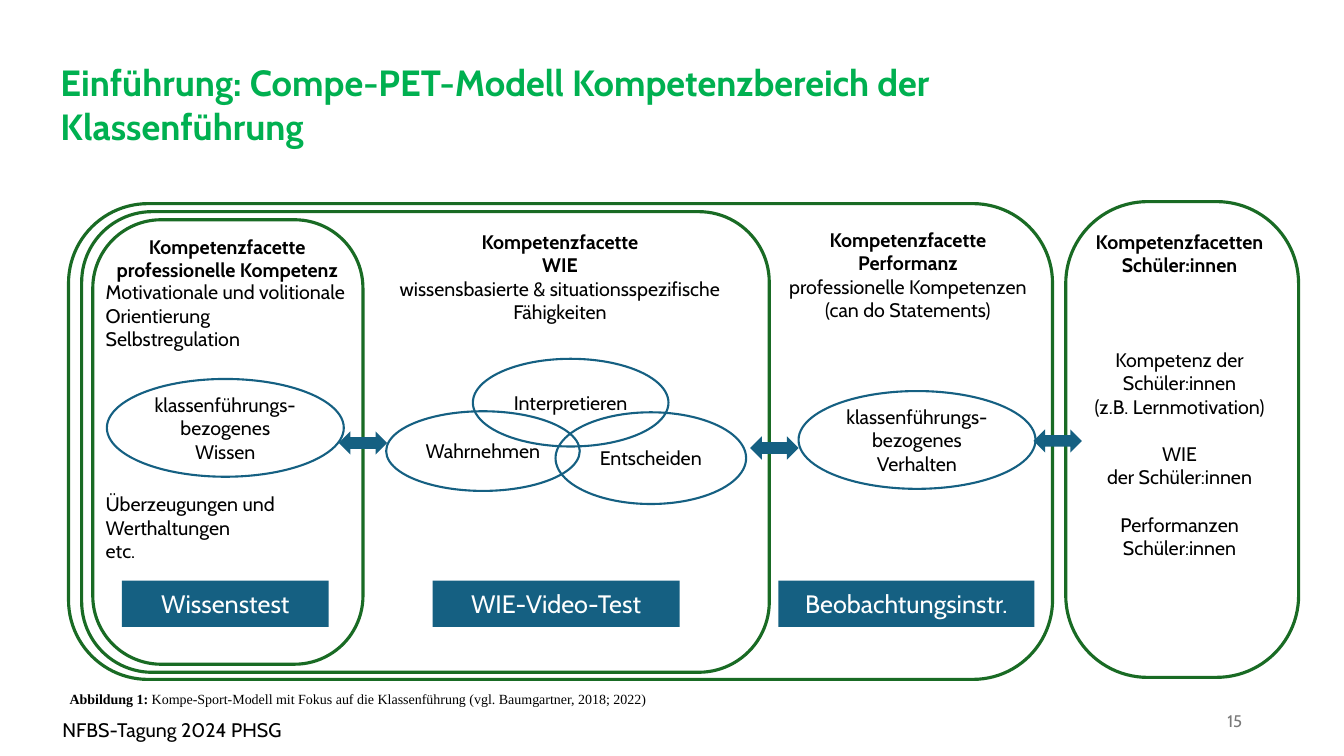
from dataclasses import dataclass

from pptx import Presentation
from pptx.dml.color import RGBColor
from pptx.enum.shapes import MSO_SHAPE as SHAPE
from pptx.enum.text import MSO_ANCHOR as ANCHOR, PP_ALIGN as ALIGN
from pptx.util import Inches, Pt

BLACK = RGBColor(0x00, 0x00, 0x00)
WHITE = RGBColor(0xFF, 0xFF, 0xFF)
GRAY = RGBColor(0x79, 0x79, 0x79)
TITLE_GREEN = RGBColor(0x00, 0xB0, 0x50)
PANEL_GREEN = RGBColor(0x19, 0x6B, 0x24)
BLUE = RGBColor(0x15, 0x60, 0x82)

LINE_PITCH = 16.85  # points, one text line at 14 pt


@dataclass(frozen=True)
class Box:
    left: float
    top: float
    width: float
    height: float


@dataclass(frozen=True)
class Line:
    """One paragraph: optional bold lead-in, and lines left free above it."""
    text: str
    bold: bool = False
    gap: int = 0
    lead: str = ""


@dataclass(frozen=True)
class TextBlock:
    box: Box
    lines: list[Line]


@dataclass(frozen=True)
class Oval:
    box: Box
    lines: list[Line]
    fill: RGBColor | None = None


@dataclass(frozen=True)
class Panel:
    box: Box
    radius: float


@dataclass(frozen=True)
class Instrument:
    left: float
    width: float
    label: str


FACTORS = TextBlock(Box(0.95, 2.73, 6.67, 2.93), [
    Line("Motivationale und volitionale"), Line("Orientierung"), Line("Selbstregulation"),
    Line("Überzeugungen und", gap=6), Line("Werthaltungen"), Line("etc."),
])

FACETS = [
    TextBlock(Box(7.65, 2.18, 2.71, 1.57), [
        Line("Kompetenzfacette", True), Line("Performanz", True),
        Line("professionelle Kompetenzen"), Line("(can do Statements)")]),
    TextBlock(Box(3.72, 2.2, 3.67, 1.1), [
        Line("Kompetenzfacette", True), Line("WIE", True),
        Line("wissensbasierte & situationsspezifische"), Line("Fähigkeiten")]),
    TextBlock(Box(0.92, 2.25, 2.67, 1.1), [
        Line("Kompetenzfacette", True), Line("professionelle Kompetenz", True)]),
    TextBlock(Box(10.68, 2.2, 2.04, 3.69), [
        Line("Kompetenzfacetten", True), Line("Schüler:innen", True),
        Line("Kompetenz der", gap=3), Line("Schüler:innen"), Line("(z.B. Lernmotivation)"),
        Line("WIE", gap=1), Line("der Schüler:innen"),
        Line("Performanzen", gap=1), Line("Schüler:innen")]),
]

OVALS = [
    Oval(Box(3.83, 4.08, 1.92, 0.79), [Line("Wahrnehmen")], WHITE),
    Oval(Box(4.69, 3.56, 1.94, 0.87), [Line("Interpretieren")]),
    Oval(Box(5.51, 4.09, 1.89, 0.91), [Line("Entscheiden")]),
    Oval(Box(1.06, 3.76, 2.35, 0.97), [Line("klassenführungs-bezogenes"), Line("Wissen")]),
    Oval(Box(7.92, 3.88, 2.35, 0.97), [Line("klassenführungs-bezogenes"), Line("Verhalten")]),
]

PANELS = [
    Panel(Box(0.68, 2.02, 9.76, 4.72), 0.167),
    Panel(Box(0.92, 2.18, 2.68, 4.41), 0.253),
    Panel(Box(0.81, 2.1, 6.82, 4.57), 0.153),
    Panel(Box(10.57, 2, 2.31, 4.72), 0.352),
]

INSTRUMENTS = [
    Instrument(1.21, 2.05, "Wissenstest"),
    Instrument(4.29, 2.45, "WIE-Video-Test"),
    Instrument(7.72, 2.54, "Beobachtungsinstr."),
]

ARROW_CORNERS = [(10.25, 4.26), (7.44, 4.33), (3.36, 4.28)]


def write(sp, lines: list[Line], *, size: float = 14, color: RGBColor = BLACK,
          font: str = "Cabin", align=ALIGN.CENTER, anchor=ANCHOR.MIDDLE,
          inset: tuple[float, float] = (0.1, 0.05), spacing: float | None = None) -> None:
    tf = sp.text_frame
    tf.word_wrap = True
    tf.vertical_anchor = anchor
    tf.margin_left = tf.margin_right = Inches(inset[0])
    tf.margin_top = tf.margin_bottom = Inches(inset[1])
    for i, line in enumerate(lines):
        p = tf.add_paragraph() if i else tf.paragraphs[0]
        p.alignment = align
        if spacing:
            p.line_spacing = spacing
        if line.gap:
            p.space_before = Pt(line.gap * LINE_PITCH)
        for text, bold in ((line.lead, True), (line.text, line.bold)):
            if not text:
                continue
            r = p.add_run()
            r.text = text
            r.font.name = font
            r.font.size = Pt(size)
            r.font.bold = bold
            r.font.color.rgb = color


def add_text(slide, box: Box, lines: list[Line], **text_format) -> None:
    sp = slide.shapes.add_textbox(*place(box))
    write(sp, lines, **text_format)


def place(box: Box) -> tuple:
    return Inches(box.left), Inches(box.top), Inches(box.width), Inches(box.height)


def add_shape(slide, kind, box: Box, *, fill: RGBColor | None = None,
              line: RGBColor | None = None, weight: float = 1.5):
    sp = slide.shapes.add_shape(kind, *place(box))
    sp.shadow.inherit = False
    if fill is None:
        sp.fill.background()
    else:
        sp.fill.solid()
        sp.fill.fore_color.rgb = fill
    if line is None:
        sp.line.fill.background()
    else:
        sp.line.color.rgb = line
        sp.line.width = Pt(weight)
    return sp


def draw_model(slide) -> None:
    add_text(slide, FACTORS.box, FACTORS.lines, align=ALIGN.LEFT, anchor=ANCHOR.TOP)
    for facet in FACETS:
        add_text(slide, facet.box, facet.lines, anchor=ANCHOR.TOP, inset=(0.12, 0.08))
    for oval in OVALS:
        sp = add_shape(slide, SHAPE.OVAL, oval.box, fill=oval.fill, line=BLUE)
        write(sp, oval.lines)
    for panel in PANELS:
        sp = add_shape(slide, SHAPE.ROUNDED_RECTANGLE, panel.box, line=PANEL_GREEN, weight=2.25)
        sp.adjustments[0] = panel.radius
    for item in INSTRUMENTS:
        sp = add_shape(slide, SHAPE.RECTANGLE, Box(item.left, 5.76, item.width, 0.46), fill=BLUE)
        write(sp, [Line(item.label)], size=18, color=WHITE)
    for left, top in ARROW_CORNERS:
        add_shape(slide, SHAPE.LEFT_RIGHT_ARROW, Box(left, top, 0.48, 0.23), fill=BLUE)


def draw_frame(slide) -> None:
    """Title, caption, footer and slide number."""
    add_text(slide, Box(0.6, 0.6, 10.79, 0.89),
             [Line("Einführung: Compe-PET-Modell Kompetenzbereich der Klassenführung", True)],
             size=26, color=TITLE_GREEN, align=ALIGN.LEFT, anchor=ANCHOR.TOP, inset=(0, 0))
    caption = add_shape(slide, SHAPE.RECTANGLE, Box(0.69, 6.82, 9.93, 0.18), fill=WHITE)
    write(caption, [Line("Kompe-Sport-Modell mit Fokus auf die Klassenführung "
                         "(vgl. Baumgartner, 2018; 2022)", lead="Abbildung 1: ")],
          size=10, font="Times New Roman", align=ALIGN.JUSTIFY, anchor=ANCHOR.TOP,
          inset=(0, 0), spacing=1.2)
    add_text(slide, Box(0.52, 7.07, 8.61, 0.34), [Line("NFBS-Tagung 2024 PHSG")],
             align=ALIGN.LEFT, anchor=ANCHOR.TOP)
    add_text(slide, Box(9.42, 6.95, 3, 0.4), [Line("15")], size=12, color=GRAY, align=ALIGN.RIGHT)


def main() -> None:
    prs = Presentation()
    prs.slide_width, prs.slide_height = Inches(13.33), Inches(7.5)
    slide = prs.slides.add_slide(prs.slide_layouts[6])
    draw_model(slide)
    draw_frame(slide)
    prs.save("out.pptx")


if __name__ == "__main__":
    main()
